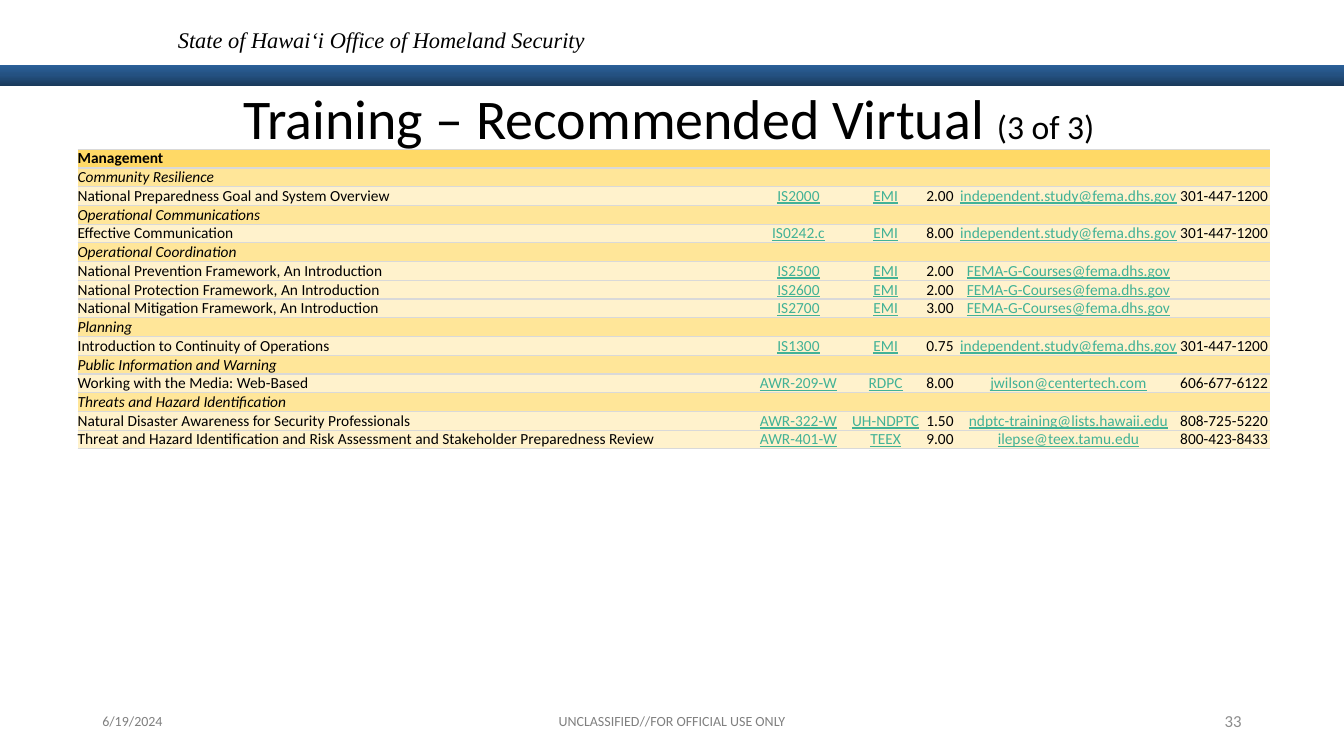
from lxml import etree
from pptx import Presentation
from pptx.dml.color import RGBColor
from pptx.enum.shapes import MSO_SHAPE
from pptx.enum.text import MSO_ANCHOR, PP_ALIGN
from pptx.oxml import parse_xml
from pptx.oxml.ns import nsdecls, qn
from pptx.util import Inches, Pt

LEFT, CENTER, RIGHT = PP_ALIGN.LEFT, PP_ALIGN.CENTER, PP_ALIGN.RIGHT
TOP, MIDDLE = MSO_ANCHOR.TOP, MSO_ANCHOR.MIDDLE
RECTANGLE = MSO_SHAPE.RECTANGLE

BLACK = RGBColor(0x00, 0x00, 0x00)
FOOTER_GRAY = RGBColor(0x80, 0x80, 0x80)
NUMBER_GRAY = RGBColor(0x8C, 0x8C, 0x8C)
LINK_GREEN = RGBColor(0x42, 0xB2, 0x96)
RULE_GRAY = RGBColor(0xD9, 0xD9, 0xD9)
GOLD = RGBColor(0xFF, 0xD9, 0x66)
AMBER = RGBColor(0xFF, 0xE6, 0x99)
CREAM = RGBColor(0xFF, 0xF2, 0xCC)
BAND_STOPS = {0: RGBColor(0x19, 0x39, 0x5B), 50: RGBColor(0x24, 0x51, 0x81),
              100: RGBColor(0x2B, 0x60, 0x99)}

# The slide is a grid of 160 columns by 90 rows
COLUMNS, ROWS = 160, 90
CELL = Inches(7.5) / ROWS

COURSE_COLUMNS = [79.7, 12.25, 8.5, 4.45, 26.15, 10.9]
COURSE_ROW = 2.23
LINK_COLUMNS = {1, 2, 4}
TEXT_SIZE = 11

STUDY_DESK = ("independent.study@fema.dhs.gov", "301-447-1200")
COURSE_DESK = ("FEMA-G-Courses@fema.dhs.gov", "")
TRAINING = {
    "Community Resilience": [
        ("National Preparedness Goal and System Overview", "IS2000", "EMI", "2.00", *STUDY_DESK)],
    "Operational Communications": [
        ("Effective Communication", "IS0242.c", "EMI", "8.00", *STUDY_DESK)],
    "Operational Coordination": [
        ("National Prevention Framework, An Introduction", "IS2500", "EMI", "2.00", *COURSE_DESK),
        ("National Protection Framework, An Introduction", "IS2600", "EMI", "2.00", *COURSE_DESK),
        ("National Mitigation Framework, An Introduction", "IS2700", "EMI", "3.00", *COURSE_DESK)],
    "Planning": [
        ("Introduction to Continuity of Operations", "IS1300", "EMI", "0.75", *STUDY_DESK)],
    "Public Information and Warning": [
        ("Working with the Media: Web-Based", "AWR-209-W", "RDPC", "8.00",
         "jwilson@centertech.com", "606-677-6122")],
    "Threats and Hazard Identification": [
        ("Natural Disaster Awareness for Security Professionals", "AWR-322-W", "UH-NDPTC", "1.50",
         "ndptc-training@lists.hawaii.edu", "808-725-5220"),
        ("Threat and Hazard Identification and Risk Assessment and Stakeholder Preparedness Review",
         "AWR-401-W", "TEEX", "9.00", "ilepse@teex.tamu.edu", "800-423-8433")],
}


def grid(*cells):
    return [round(count * CELL) for count in cells]


def style_font(font, size, color=BLACK, face="Calibri", bold=False, italic=False, underline=False):
    font.name, font.size = face, Pt(size)
    font.color.rgb = color
    font.bold, font.italic, font.underline = bold, italic, underline


def add_text(slide, area, text, size, align=LEFT, anchor=TOP, **style):
    frame = slide.shapes.add_textbox(*grid(*area)).text_frame
    frame.word_wrap = True
    frame.vertical_anchor = anchor
    paragraph = frame.paragraphs[0]
    paragraph.text = text
    paragraph.alignment = align
    style_font(paragraph.runs[0].font, size, **style)
    return paragraph


def add_band(slide):
    band = slide.shapes.add_shape(RECTANGLE, *grid(0, 7.68, COLUMNS, 2.52))
    band.shadow.inherit = False
    band.line.fill.background()
    stops = "".join(f'<a:gs pos="{share * 1000}"><a:srgbClr val="{color}"/></a:gs>'
                    for share, color in BAND_STOPS.items())
    gradient = parse_xml(f'<a:gradFill {nsdecls("a")} rotWithShape="1"><a:gsLst>{stops}</a:gsLst>'
                         '<a:lin ang="16200000" scaled="0"/></a:gradFill>')
    band._element.spPr.find(qn("a:prstGeom")).addnext(gradient)


def add_title(slide):
    title = add_text(slide, (-0.8, 10.3, 160.9, 7.4), "Training – Recommended Virtual ", 40, CENTER)
    title.line_spacing = 0.9
    part = title.add_run()
    part.text = "(3 of 3)"
    style_font(part.font, 24)


def set_borders(cell):
    # Gray rules above and below, none at the sides
    properties = cell._tc.get_or_add_tcPr()
    for side in ("lnL", "lnR", "lnT", "lnB"):
        border = etree.SubElement(properties, qn(f"a:{side}"), w=str(Pt(1)))
        if side in ("lnL", "lnR"):
            etree.SubElement(border, qn("a:noFill"))
        else:
            rule = etree.SubElement(border, qn("a:solidFill"))
            etree.SubElement(rule, qn("a:srgbClr"), val=str(RULE_GRAY))


def fill_cell(cell, text, fill, align=LEFT, **style):
    set_borders(cell)
    cell.fill.solid()
    cell.fill.fore_color.rgb = fill
    cell.margin_left = cell.margin_right = cell.margin_top = cell.margin_bottom = 0
    paragraph = cell.text_frame.paragraphs[0]
    if text:
        paragraph.text = text
        paragraph.alignment = align
        style_font(paragraph.runs[0].font, TEXT_SIZE, **style)
    else:
        # Keeps an empty cell as low as the row
        etree.SubElement(paragraph._p, qn("a:endParaRPr"), sz=str(TEXT_SIZE * 100))


def add_courses(slide):
    blanks = ("",) * (len(COURSE_COLUMNS) - 1)
    lines = [(("Management", *blanks), GOLD, {"bold": True})]
    for topic, courses in TRAINING.items():
        lines.append(((topic, *blanks), AMBER, {"italic": True}))
        lines += [(course, CREAM, {}) for course in courses]

    area = grid(9.24, 17.76, sum(COURSE_COLUMNS), COURSE_ROW * len(lines))
    table = slide.shapes.add_table(len(lines), len(COURSE_COLUMNS), *area).table
    table.first_row = table.horz_banding = False
    for column, width in zip(table.columns, grid(*COURSE_COLUMNS)):
        column.width = width
    for row, (texts, fill, style) in zip(table.rows, lines):
        row.height = grid(COURSE_ROW)[0]
        for index, (cell, text) in enumerate(zip(row.cells, texts)):
            link = {"color": LINK_GREEN, "underline": True} if index in LINK_COLUMNS else {}
            fill_cell(cell, text, fill, CENTER if index else LEFT, **style, **link)


def add_footer(slide):
    for left, width, text, size, align, color in (
            (11, 36, "6/19/2024", 10, LEFT, FOOTER_GRAY),
            (53, 54, "UNCLASSIFIED//FOR OFFICIAL USE ONLY", 10, CENTER, FOOTER_GRAY),
            (113, 36, "33", 12, RIGHT, NUMBER_GRAY)):
        add_text(slide, (left, 83.4, width, 4.8), text, size, align, MIDDLE, color=color)


def main():
    deck = Presentation()
    deck.slide_width, deck.slide_height = grid(COLUMNS, ROWS)
    slide = deck.slides.add_slide(deck.slide_layouts[6])
    # Header
    add_band(slide)
    add_text(slide, (20, 2.5, 95.5, 4.45), "State of Hawai‘i Office of Homeland Security", 16,
             face="Times New Roman", italic=True)
    # Body
    add_title(slide)
    add_courses(slide)
    add_footer(slide)
    deck.save("out.pptx")


if __name__ == "__main__":
    main()
